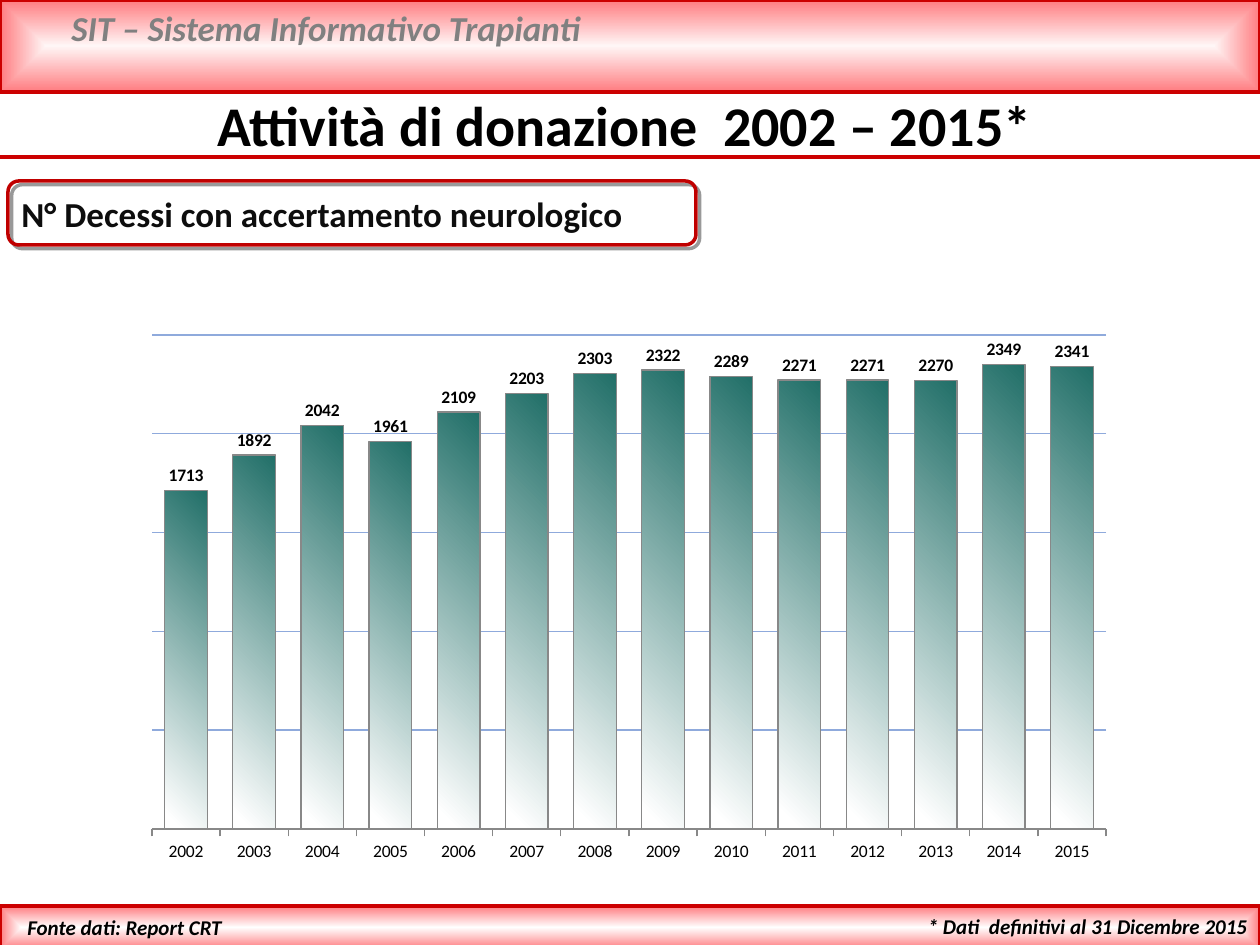
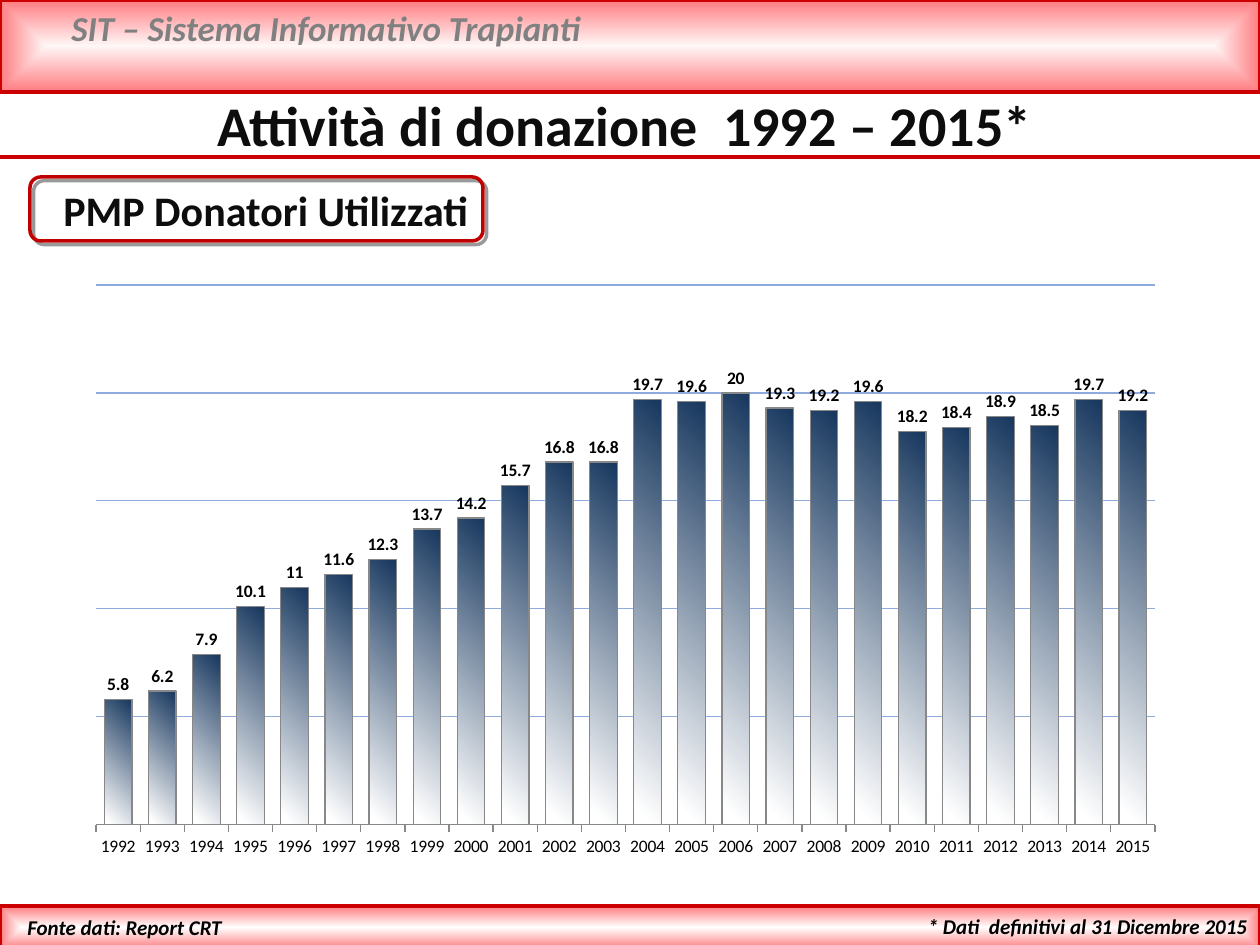
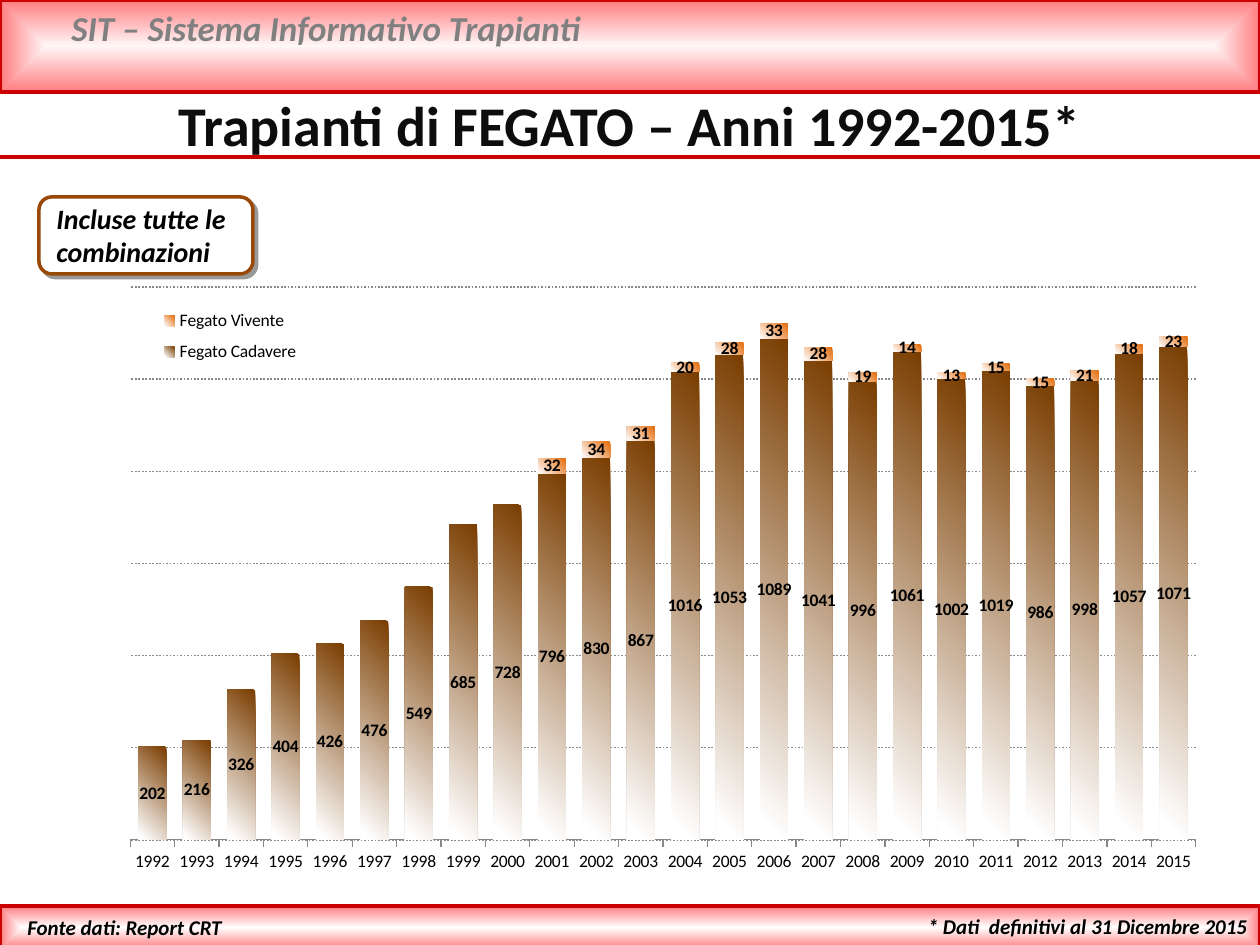
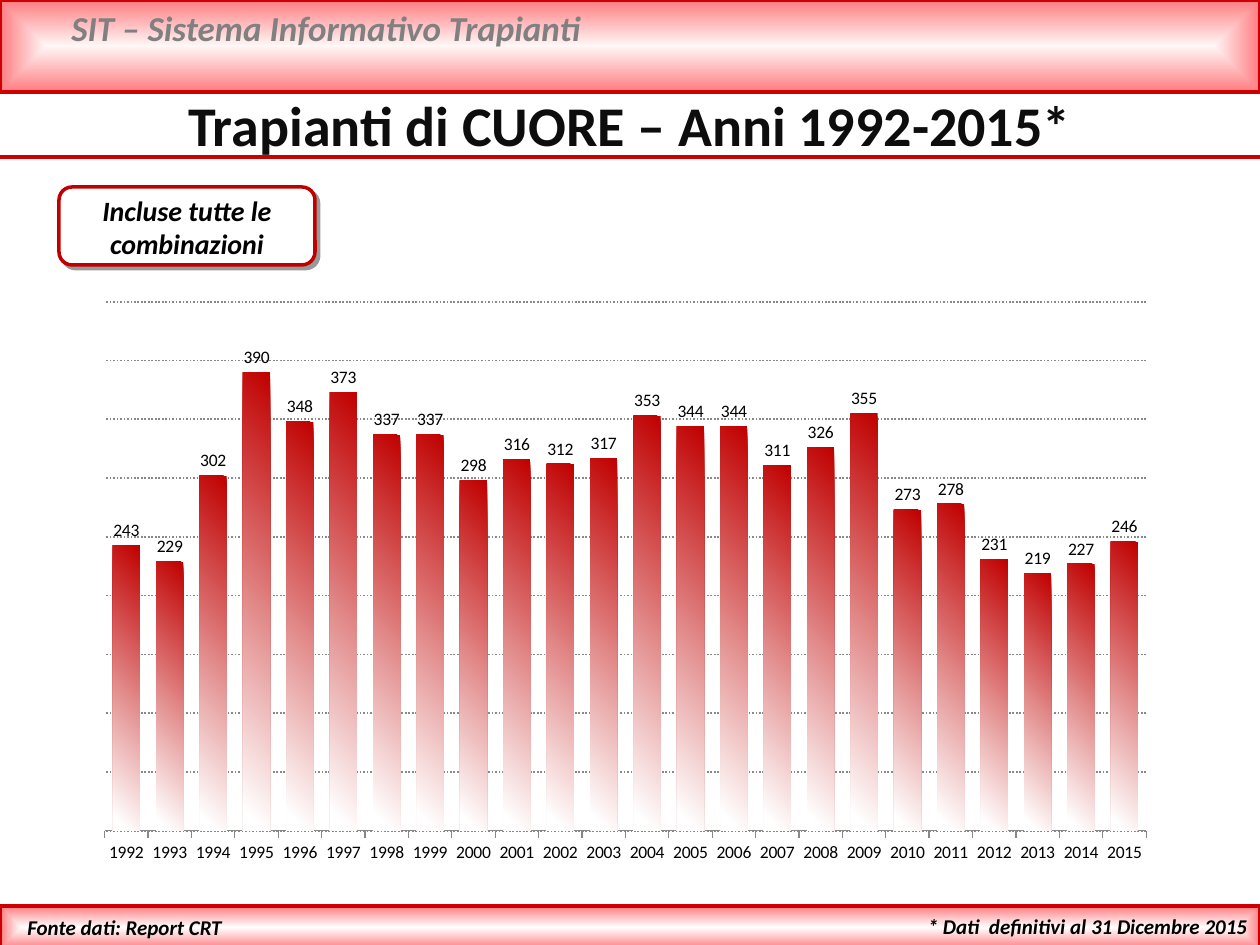
from dataclasses import dataclass

from pptx import Presentation
from pptx import util as u
from pptx.chart import data as cd
from pptx.dml.color import RGBColor as Rgb
from pptx.enum import chart as ch, dml, shapes, text
from pptx.oxml import ns, parse_xml

PX = 914400 / 126  # EMU in one px


@dataclass(frozen=True)
class Theme:
    font: str = "Calibri"
    black: str = "000000"
    ink: str = "0D0D0D"
    muted: str = "808080"
    white: str = "FFFFFF"
    rule: str = "CC0000"
    band_edge: str = "FF7C80"
    band_glow: str = "FFF6F6"
    frame: str = "C00000"
    brown: str = "984807"
    bar_green: str = "216F68"
    bar_navy: str = "17375E"
    bar_brown: str = "7A3D00"
    bar_orange: str = "E46C0A"
    bar_red: str = "C00000"
    axis: str = "888888"
    grid: str = "8FAADC"
    title: int = 32
    large: int = 24
    header: int = 20
    note: int = 16
    footer: int = 12
    chart: int = 10


T = Theme()


def write(shape, box, words, color, size, align=text.PP_ALIGN.LEFT, italic=False):
    """Place a text shape and format its single paragraph."""
    for side, px in zip(("left", "top", "width", "height"), box):
        setattr(shape, side, u.Emu(round(px * PX)))
    frame = shape.text_frame
    frame.text = words
    frame.word_wrap = True
    frame.auto_size = text.MSO_AUTO_SIZE.NONE
    line = frame.paragraphs[0]
    line.alignment = align
    font_format = {"name": T.font, "size": u.Pt(size), "bold": True, "italic": italic}
    for key, value in font_format.items():
        setattr(line.runs[0].font, key, value)
    line.runs[0].font.color.rgb = Rgb.from_string(color)


def set_layout(part, index, inner, **spots):
    """Give a plot area or legend a fixed place, in fractions of the chart."""
    for old in part.findall(ns.qn("c:layout")):
        part.remove(old)
    target = '<c:layoutTarget val="inner"/>' if inner else ""
    modes = '<c:xMode val="edge"/><c:yMode val="edge"/>'
    values = "".join(f'<c:{key} val="{value}"/>' for key, value in spots.items())
    part.insert(index, parse_xml(
        f'<c:layout {ns.nsdecls("c")}><c:manualLayout>{target}{modes}{values}'
        "</c:manualLayout></c:layout>"))


YEARS = [str(year) for year in range(1992, 2016)]
LEFT, CENTER, RIGHT = text.PP_ALIGN.LEFT, text.PP_ALIGN.CENTER, text.PP_ALIGN.RIGHT

# Content of the four slides; boxes are left, top, width, height in px
pages = [
    dict(title="Attività di donazione  2002 – 2015*", title_color=T.black, title_width=1250,
         frame=(8, 181, 688, 64), frame_color=T.frame, frame_fill=False,
         caption="N° Decessi con accertamento neurologico", caption_box=(9, 186, 690, 64),
         caption_color=T.ink, caption_size=T.header, caption_align=LEFT, caption_italic=False,
         chart=(132, 324, 994, 549), years=YEARS[10:], top=2500, step=500,
         dotted=False, outlined=True, bold_labels=True,
         series=[("Series 1", T.bar_green, 0.96,
                  (1713, 1892, 2042, 1961, 2109, 2203, 2303, 2322, 2289, 2271, 2271,
                   2270, 2349, 2341))]),
    dict(title="Attività di donazione  1992 – 2015*", title_color=T.ink, title_width=1250,
         frame=(30, 177, 453, 64), frame_color=T.frame, frame_fill=False,
         caption="PMP Donatori Utilizzati", caption_box=(51, 178, 440, 64),
         caption_color=T.ink, caption_size=T.large, caption_align=LEFT, caption_italic=False,
         chart=(74, 273, 1103, 600), years=YEARS, top=25, step=5,
         dotted=False, outlined=True, bold_labels=True,
         series=[("Series 1", T.bar_navy, 0.96,
                  (5.8, 6.2, 7.9, 10.1, 11, 11.6, 12.3, 13.7, 14.2, 15.7, 16.8, 16.8,
                   19.7, 19.6, 20, 19.3, 19.2, 19.6, 18.2, 18.4, 18.9, 18.5, 19.7, 19.2))]),
    dict(title="Trapianti di FEGATO – Anni 1992-2015*", title_color=T.ink, title_width=1260,
         frame=(39, 197, 214, 77), frame_color=T.brown, frame_fill=True,
         caption="Incluse tutte le combinazioni", caption_box=(44, 195, 208, 81),
         caption_color=T.black, caption_size=T.note, caption_align=LEFT, caption_italic=True,
         chart=(108, 275, 1110, 614), years=YEARS, top=1200, step=200,
         dotted=True, outlined=False, bold_labels=True,
         series=[("Fegato Cadavere", T.bar_brown, 0.96,
                  (202, 216, 326, 404, 426, 476, 549, 685, 728, 796, 830, 867, 1016, 1053,
                   1089, 1041, 996, 1061, 1002, 1019, 986, 998, 1057, 1071)),
                 ("Fegato Vivente", T.bar_orange, 1,
                  [None] * 9 + [32, 34, 31, 20, 28, 33, 28, 19, 14, 13, 15, 15, 21, 18, 23])]),
    dict(title="Trapianti di CUORE – Anni 1992-2015*", title_color=T.ink, title_width=1260,
         frame=(59, 187, 256, 78), frame_color=T.frame, frame_fill=True,
         caption="Incluse tutte le combinazioni", caption_box=(59, 187, 256, 81),
         caption_color=T.black, caption_size=T.note, caption_align=CENTER, caption_italic=True,
         chart=(83, 290, 1085, 588), years=YEARS, top=450, step=50,
         dotted=True, outlined=False, bold_labels=False,
         series=[("Series 1", T.bar_red, 0.96,
                  (243, 229, 302, 390, 348, 373, 337, 337, 298, 316, 312, 317, 353, 344,
                   344, 311, 326, 355, 273, 278, 231, 219, 227, 246))]),
]

deck = Presentation()
deck.slide_width, deck.slide_height = u.Inches(10), u.Inches(7.5)
layout = deck.slide_layouts[5]
slides = [deck.slides.add_slide(layout) for page in pages]

# Bands, rule and footers: drawn once, then moved to the shared layout
stage = slides[0].shapes
shared = []
for box, glow in (((0, 0, 1260, 92), T.band_glow), ((0, 906, 1260, 43), T.white)):
    band = stage.add_shape(shapes.MSO_SHAPE.RECTANGLE, *(round(n * PX) for n in box))
    band.shadow.inherit = False
    band.line.color.rgb = Rgb.from_string(T.rule)
    band.line.width = u.Pt(2)
    band.fill.gradient()
    for stop, color, position in zip(band.fill.gradient_stops, (glow, T.band_edge), (0, 1)):
        stop.color.rgb = Rgb.from_string(color)
        stop.position = position
    linear = band.element.spPr.find(".//" + ns.qn("a:lin"))
    linear.getparent().replace(linear, parse_xml(
        f'<a:path {ns.nsdecls("a")} path="shape">'
        '<a:fillToRect l="50000" t="50000" r="50000" b="50000"/></a:path>'))
    shared.append(band)

rule = stage.add_connector(shapes.MSO_CONNECTOR.STRAIGHT, 0, round(157 * PX),
                           deck.slide_width, round(157 * PX))
rule.line.color.rgb = Rgb.from_string(T.rule)
rule.line.width = u.Pt(2)
rule.element.spPr.append(parse_xml(f'<a:effectLst {ns.nsdecls("a")}/>'))
shared.append(rule)

for box, words, color, size, align in (
        ((59, 0, 1131, 55), "SIT – Sistema Informativo Trapianti", T.muted, T.header, LEFT),
        ((740, 907, 520, 38), "* Dati  definitivi al 31 Dicembre 2015", T.black, T.footer, RIGHT),
        ((15, 908, 404, 37), "Fonte dati: Report CRT", T.black, T.footer, LEFT)):
    strip = stage.add_textbox(0, 0, 0, 0)
    write(strip, box, words, color, size, align, italic=True)
    shared.append(strip)

for part in shared:
    layout.shapes.element.append(part.element)

for slide, page in zip(slides, pages):
    # Title
    write(slide.shapes.title, (0, 84, page["title_width"], 81), page["title"],
          page["title_color"], T.title, CENTER)

    # Framed caption
    frame = slide.shapes.add_shape(shapes.MSO_SHAPE.ROUNDED_RECTANGLE,
                                   *(round(n * PX) for n in page["frame"]))
    if page["frame_fill"]:
        frame.fill.solid()
        frame.fill.fore_color.rgb = Rgb.from_string(T.white)
    else:
        frame.fill.background()
    frame.line.color.rgb = Rgb.from_string(page["frame_color"])
    frame.line.width = u.Pt(2)
    frame.shadow.inherit = False
    frame.element.spPr.find(ns.qn("a:effectLst")).append(parse_xml(
        f'<a:outerShdw {ns.nsdecls("a")} dist="38100" dir="2700000" algn="tl" rotWithShape="0">'
        f'<a:srgbClr val="{T.black}"><a:alpha val="40000"/></a:srgbClr></a:outerShdw>'))
    write(slide.shapes.add_textbox(0, 0, 0, 0), page["caption_box"], page["caption"],
          page["caption_color"], page["caption_size"], page["caption_align"],
          page["caption_italic"])

    # Chart
    stacked = len(page["series"]) > 1
    figures = cd.CategoryChartData()
    figures.categories = page["years"]
    for name, color, fade_end, values in page["series"]:
        figures.add_series(name, values)
    kind = ch.XL_CHART_TYPE.COLUMN_STACKED if stacked else ch.XL_CHART_TYPE.COLUMN_CLUSTERED
    chart = slide.shapes.add_chart(kind, *(round(n * PX) for n in page["chart"]), figures).chart
    chart.has_title = False
    chart.has_legend = stacked
    for key, value in {"name": T.font, "size": u.Pt(T.chart)}.items():
        setattr(chart.font, key, value)
    chart.font.color.rgb = Rgb.from_string(T.black)
    set_layout(chart.element.find(".//" + ns.qn("c:plotArea")), 0, True,
               x=0.02, y=0.02, w=0.96, h=0.9)

    # Columns and their values
    plot = chart.plots[0]
    plot_format = {"gap_width": 60, "overlap": 100 if stacked else -20,
                   "vary_by_categories": False, "has_data_labels": True}
    for key, value in plot_format.items():
        setattr(plot, key, value)
    spot = ch.XL_LABEL_POSITION
    label_format = {"show_value": True, "position": spot.CENTER if stacked else spot.OUTSIDE_END}
    for key, value in label_format.items():
        setattr(plot.data_labels, key, value)
    label_font = {"name": T.font, "size": u.Pt(T.chart), "bold": page["bold_labels"]}
    for key, value in label_font.items():
        setattr(plot.data_labels.font, key, value)
    plot.data_labels.font.color.rgb = Rgb.from_string(T.black)
    for columns, (name, color, fade_end, values) in zip(plot.series, page["series"]):
        fill = columns.format.fill
        fill.gradient()
        fill.gradient_angle = 225
        for stop, tint, position in zip(fill.gradient_stops, (color, T.white), (0, fade_end)):
            stop.color.rgb = Rgb.from_string(tint)
            stop.position = position
        if page["outlined"]:
            columns.format.line.color.rgb = Rgb.from_string(T.axis)
            columns.format.line.width = u.Pt(0.75)
        else:
            columns.format.line.fill.background()

    # Axes and grid
    year_axis, count_axis = chart.category_axis, chart.value_axis
    year_axis.major_tick_mark = ch.XL_TICK_MARK.OUTSIDE
    year_axis.format.line.color.rgb = Rgb.from_string(T.axis)
    count_format = {"minimum_scale": 0, "maximum_scale": page["top"], "major_unit": page["step"],
                    "has_major_gridlines": True, "visible": False}
    for key, value in count_format.items():
        setattr(count_axis, key, value)
    grid = count_axis.major_gridlines.format.line
    grid.color.rgb = Rgb.from_string(T.axis if page["dotted"] else T.grid)
    grid.width = u.Pt(1 if page["dotted"] else 0.75)
    if page["dotted"]:
        grid.dash_style = dml.MSO_LINE.ROUND_DOT

    # Legend
    if stacked:
        chart.legend.position = ch.XL_LEGEND_POSITION.LEFT
        chart.legend.include_in_layout = True
        set_layout(chart.element.find(".//" + ns.qn("c:legend")), 1, False,
                   x=0.04, y=0.04, w=0.14, h=0.12)

deck.save("out.pptx")
